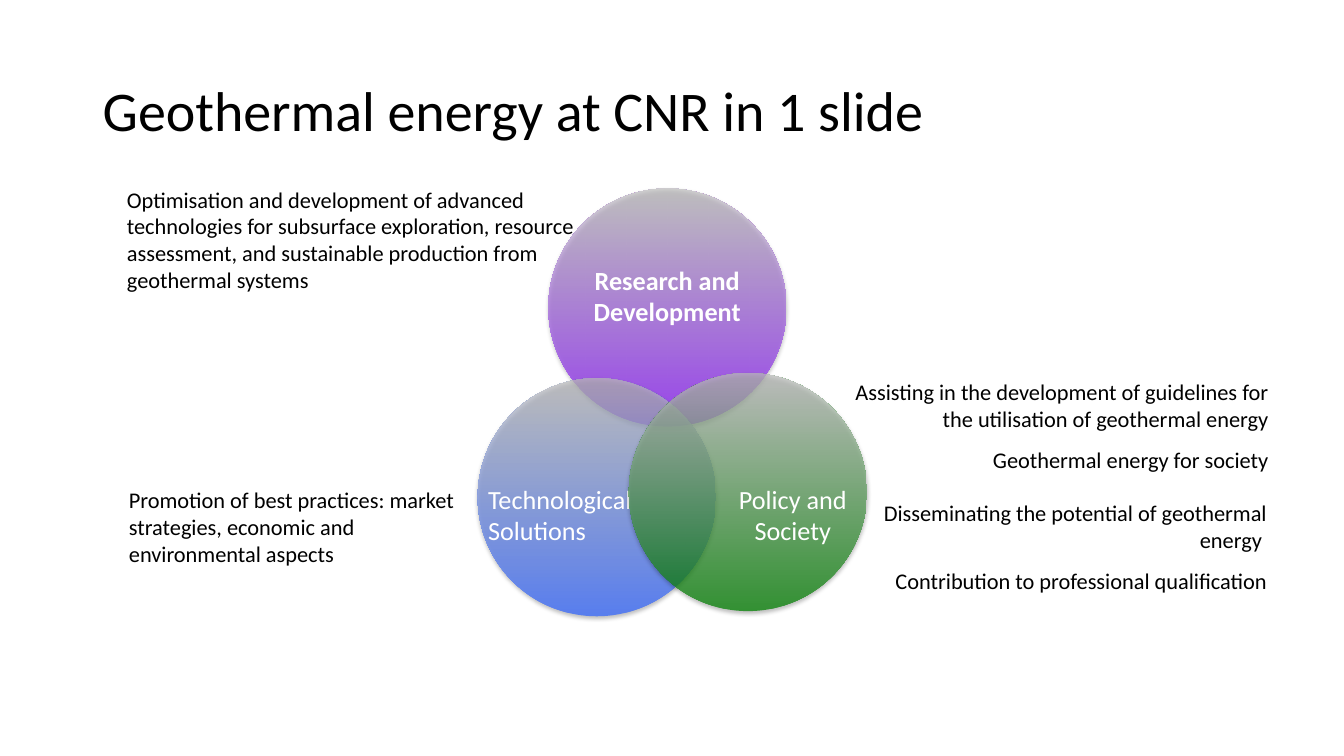
from dataclasses import dataclass

from lxml import etree
from pptx import Presentation
from pptx.dml.color import RGBColor
from pptx.enum import shapes, text
from pptx.oxml import ns
from pptx.util import Cm, Pt

FONT = "Calibri"
COLORS = {
    "text": "000000",
    "label": "FFFFFF",
    "grey": "BABABA",
    "research": "8000FF",
    "technology": "3366FF",
    "policy": "008000",
}
LEFT, CENTER, RIGHT = text.PP_ALIGN.LEFT, text.PP_ALIGN.CENTER, text.PP_ALIGN.RIGHT
TOP, MIDDLE = text.MSO_ANCHOR.TOP, text.MSO_ANCHOR.MIDDLE
DIAMETER = 6.0


@dataclass
class TextBox:
    """Box in centimetres; inset is (horizontal, vertical)."""
    box: tuple[float, float, float, float]
    paragraphs: list[str]
    size: float = 16
    color: str = "text"
    align: text.PP_ALIGN = LEFT
    anchor: text.MSO_ANCHOR = TOP
    inset: tuple[float, float] = (0.18, 0.13)
    space_before: float = 0
    line_spacing: float = 1.0
    bold: bool = False
    grow: bool = True


@dataclass
class Circle:
    left: float
    top: float
    color: str
    opacity: int
    label: TextBox


def label(box: tuple[float, float, float, float], words: str,
          align: text.PP_ALIGN = CENTER, bold: bool = False) -> TextBox:
    return TextBox(box, [words], 18.7, "label", align, MIDDLE, (0.18, 0.18), bold=bold)


NOTES = [
    TextBox((3.07, 12.12, 8.97, 2.31),
            ["Promotion of best practices: market strategies, economic and environmental aspects"]),
    TextBox((3.02, 4.55, 11.73, 3.0),
            ["Optimisation and development of advanced technologies for subsurface exploration, "
             "resource assessment, and sustainable production from geothermal systems"]),
    TextBox((20.85, 9.4, 11.3, 2.67),
            ["Assisting in the development of guidelines for the utilisation of geothermal energy",
             "Geothermal energy for society"], align=RIGHT, space_before=10),
]
CIRCLES = [
    Circle(13.82, 4.75, "research", 66,
           label((14.25, 6.38, 5.13, 2.13), "Research and Development", bold=True)),
    Circle(12.04, 9.53, "technology", 72,
           label((12.12, 11.79, 4.78, 2.36), "Technological Solutions", LEFT)),
    Circle(15.85, 9.4, "policy", 72,
           label((17.86, 11.79, 4.24, 2.36), "Policy and Society")),
]
TITLE = TextBox((2.34, 1.02, 26.92, 3.68), ["Geothermal energy at CNR in 1 slide"], 40,
                anchor=MIDDLE, inset=(0.25, 0.13), line_spacing=0.9, grow=False)
OUTREACH = TextBox((21.26, 12.45, 10.92, 2.67),
                   ["Disseminating the potential of geothermal energy ",
                    "Contribution to professional qualification"],
                   align=RIGHT, inset=(0.25, 0.13), space_before=10)


def rgb(name: str) -> RGBColor:
    return RGBColor.from_string(COLORS[name])


def add_text(parent, item: TextBox) -> None:
    tf = parent.add_textbox(*map(Cm, item.box)).text_frame
    tf.word_wrap = True
    tf.auto_size = (text.MSO_AUTO_SIZE.SHAPE_TO_FIT_TEXT if item.grow
                    else text.MSO_AUTO_SIZE.NONE)
    tf.vertical_anchor = item.anchor
    tf.margin_left = tf.margin_right = Cm(item.inset[0])
    tf.margin_top = tf.margin_bottom = Cm(item.inset[1])
    for i, words in enumerate(item.paragraphs):
        p = tf.add_paragraph() if i else tf.paragraphs[0]
        p.alignment = item.align
        p.line_spacing = item.line_spacing
        if i:
            p.space_before = Pt(item.space_before)
        r = p.add_run()
        r.text = words
        r.font.name, r.font.size, r.font.bold = FONT, Pt(item.size), item.bold
        r.font.color.rgb = rgb(item.color)


def set_alpha(color_element, percent: int) -> None:
    etree.SubElement(color_element, ns.qn("a:alpha"), val=str(percent * 1000))


def add_shadow(sp) -> None:
    sp.shadow.inherit = False
    effects = sp._element.spPr.find(ns.qn("a:effectLst"))
    shadow = etree.SubElement(effects, ns.qn("a:outerShdw"), blurRad=str(Pt(3)),
                              dist=str(Pt(1.8)), dir="5400000", rotWithShape="0")
    set_alpha(etree.SubElement(shadow, ns.qn("a:srgbClr"), val="000000"), 35)


def add_circle(parent, circle: Circle) -> None:
    """Group a translucent gradient circle with its label."""
    group = parent.add_group_shape().shapes
    sp = group.add_shape(shapes.MSO_SHAPE.OVAL, Cm(circle.left), Cm(circle.top),
                         Cm(DIAMETER), Cm(DIAMETER))
    sp.line.fill.background()
    sp.fill.gradient()
    sp.fill.gradient_angle = 90
    for stop, name in zip(sp.fill.gradient_stops, (circle.color, "grey")):
        stop.color.rgb = rgb(name)
    for color_element in sp._element.spPr.iter(ns.qn("a:srgbClr")):
        set_alpha(color_element, circle.opacity)
    add_shadow(sp)
    add_text(group, circle.label)


def main() -> None:
    prs = Presentation()
    prs.slide_width, prs.slide_height = Cm(33.87), Cm(19.05)
    s = prs.slides.add_slide(prs.slide_layouts[6])
    for note in NOTES:
        add_text(s.shapes, note)
    for circle in CIRCLES:
        add_circle(s.shapes, circle)
    for item in (TITLE, OUTREACH):
        add_text(s.shapes, item)
    prs.save("out.pptx")


if __name__ == "__main__":
    main()
